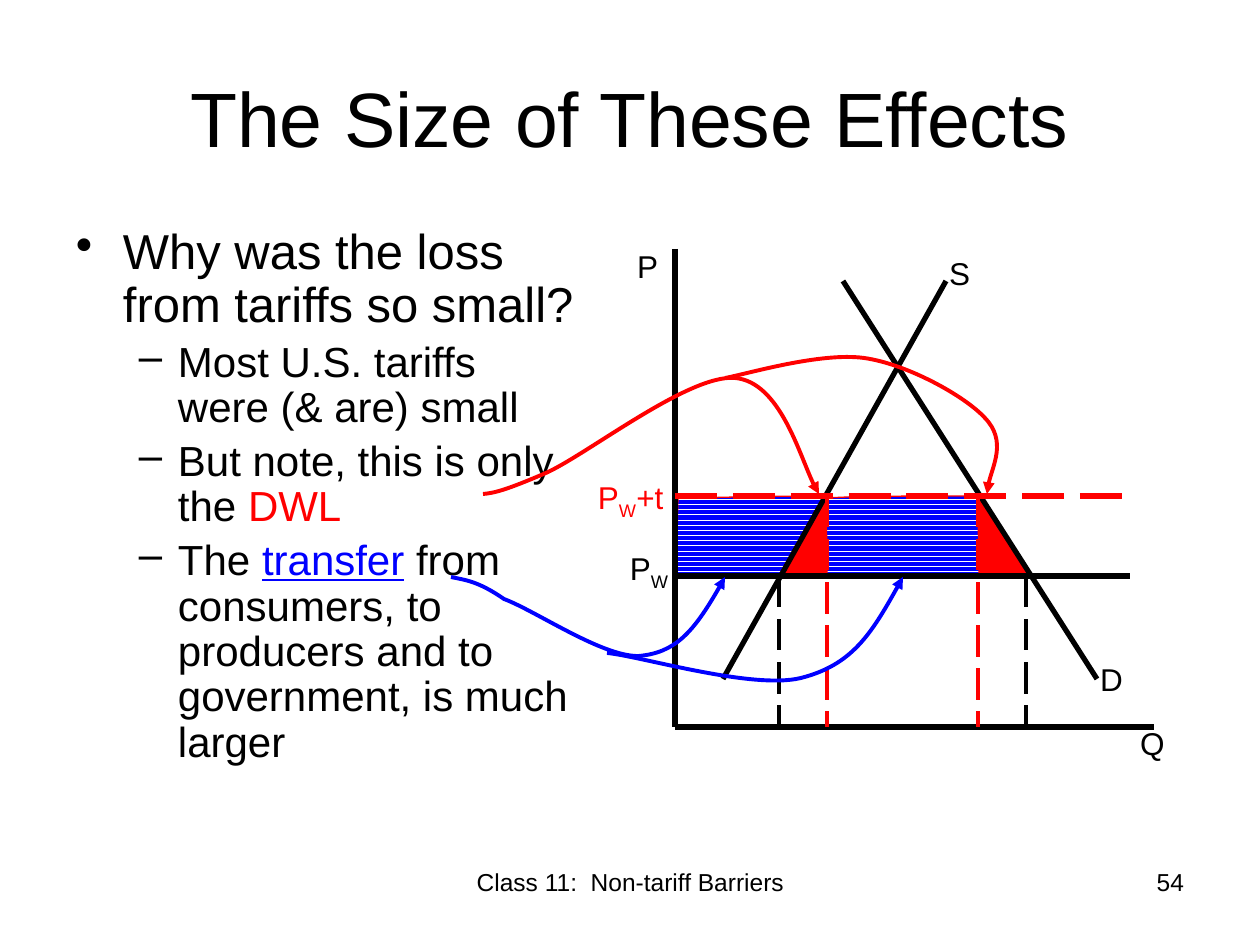
import pptx
import pptx.util
import pptx.dml.color
import pptx.enum.dml
import pptx.enum.shapes
import pptx.enum.text
import pptx.oxml
import pptx.oxml.ns

RGB = pptx.dml.color.RGBColor
BLACK, WHITE = RGB(0, 0, 0), RGB(255, 255, 255)
RED, BLUE = RGB(255, 0, 0), RGB(0, 0, 255)
ALIGN = pptx.enum.text.PP_ALIGN
ANCHOR = pptx.enum.text.MSO_ANCHOR
EMU_PER_PX = 914400 / 126
qn = pptx.oxml.ns.qn


def px(length):
    return pptx.util.Emu(round(length * EMU_PER_PX))


def add_xml(parent, tag, **attributes):
    element = parent.makeelement(qn(tag), attributes)
    parent.append(element)
    return element


class Diagram:
    font = "Arial"

    def __init__(self, slide):
        self.shapes = slide.shapes

    def frame(self, left, top, width, height, insets=(13, 6, 13, 6)):
        frame = self.shapes.add_textbox(px(left), px(top), px(width), px(height)).text_frame
        frame.word_wrap = True
        frame.margin_left, frame.margin_top, frame.margin_right, frame.margin_bottom = map(px, insets)
        return frame

    def fill_paragraph(self, paragraph, parts, size, align=None):
        """Each part is (text, colour), followed by "sub" or "underline" if needed."""
        paragraph.font.name = self.font
        paragraph.font.size = pptx.util.Pt(size)
        paragraph.alignment = align
        for words, colour, *looks in parts:
            run = paragraph.add_run()
            run.text = words
            run.font.name = self.font
            run.font.size = pptx.util.Pt(size)
            run.font.color.rgb = colour
            if "underline" in looks:
                run.font.underline = True
            if "sub" in looks:
                run.font._element.set("baseline", "-25000")

    def text(self, box, words, size, align, anchor=ANCHOR.TOP):
        frame = self.frame(*box)
        frame.vertical_anchor = anchor
        self.fill_paragraph(frame.paragraphs[0], [(words, BLACK)], size, align)

    def label(self, left, top, width, *parts):
        frame = self.frame(left, top, width, 45, (10, 5, 0, 5))
        self.fill_paragraph(frame.paragraphs[0], parts, 18)

    def bullets(self, box, items):
        frame = self.frame(*box)
        for number, (level, parts) in enumerate(items):
            paragraph = frame.add_paragraph() if number else frame.paragraphs[0]
            size, mark, margin, indent = ((28, "•", 47, -47), (24, "–", 102, -39))[level]
            self.fill_paragraph(paragraph, parts, size)
            paragraph.level = level
            paragraph.line_spacing = 0.9
            paragraph.space_before = pptx.util.Pt(size * 0.2)
            properties = paragraph._p.get_or_add_pPr()
            properties.set("marL", str(px(margin)))
            properties.set("indent", str(px(indent)))
            bullet = properties.makeelement(qn("a:buChar"), {"char": mark})
            properties.insert_element_before(bullet, "a:tabLst", "a:defRPr", "a:extLst")

    def line(self, start, end, colour=BLACK, width=3, dashed=False):
        connector = self.shapes.add_connector(
            pptx.enum.shapes.MSO_CONNECTOR.STRAIGHT, *map(px, start + end))
        connector.line.color.rgb = colour
        connector.line.width = pptx.util.Pt(width)
        if dashed:
            connector.line.dash_style = pptx.enum.dml.MSO_LINE.LONG_DASH
        add_xml(connector._element.spPr, "a:effectLst")

    def curve(self, points, colour, width, closed=False):
        """Draw Bézier segments: a start point, then three points a segment."""
        builder = self.shapes.build_freeform(*points[0], scale=EMU_PER_PX)
        builder.add_line_segments(points[1:], close=closed)
        shape = builder.convert_to_shape()
        shape.shadow.inherit = False
        shape.line.color.rgb = colour
        shape.line.width = pptx.util.Pt(width)
        steps = list(shape._element.iter(qn("a:lnTo")))
        for first in range(0, len(points) - 1, 3):
            segment = steps[first].makeelement(qn("a:cubicBezTo"), {})
            steps[first].addprevious(segment)
            for step in steps[first:first + 3]:
                segment.append(step[0])
                step.getparent().remove(step)
        return shape

    def region(self, points, hatched=False):
        fill = self.curve(points, RED, 0.75, closed=True).fill
        if hatched:
            fill.patterned()
            fill.pattern = pptx.enum.dml.MSO_PATTERN.DARK_HORIZONTAL
            fill.fore_color.rgb = BLUE
            fill.back_color.rgb = WHITE
        else:
            fill.solid()
            fill.fore_color.rgb = RED

    def arrow(self, points, colour):
        shape = self.curve(points, colour, 2.25)
        shape.fill.background()
        add_xml(shape._element.spPr.find(qn("a:ln")), "a:tailEnd", type="triangle")


def main():
    deck = pptx.Presentation()
    deck.slide_width, deck.slide_height = px(1260), px(945)
    diagram = Diagram(deck.slides.add_slide(deck.slide_layouts[6]))

    # Footer, title and argument
    diagram.text((431, 861, 399, 66), "Class 11:  Non-tariff Barriers", 14, ALIGN.CENTER)
    diagram.text((903, 861, 294, 66), "54", 14, ALIGN.RIGHT)
    diagram.text((63, 38, 1134, 158), "The Size of These Effects", 44, ALIGN.CENTER, ANCHOR.MIDDLE)
    diagram.bullets((63, 221, 525, 624), [
        (0, [("Why was the loss from tariffs so small?", BLACK)]),
        (1, [("Most U.S. tariffs were (& are) small", BLACK)]),
        (1, [("But note, this is only the ", BLACK), ("DWL", RED)]),
        (1, [("The ", BLACK), ("transfer", BLUE, "underline"),
             (" from consumers, to producers and to government, is much larger", BLACK)]),
    ])

    # Welfare areas: consumption loss, government, producers, production loss
    diagram.region([(980, 496), (979, 530), (979, 544), (979, 576), (1013, 576), (1013, 576),
                    (1031, 576), (1008, 538), (998, 523), (980, 496)])
    diagram.region([(827, 498), (824, 532), (824, 546), (824, 577), (858, 576), (960, 576),
                    (979, 575), (979, 544), (978, 538), (978, 496), (905, 496), (857, 496),
                    (827, 498)], hatched=True)
    diagram.region([(678, 498), (677, 532), (677, 546), (677, 577), (711, 577), (762, 576),
                    (780, 576), (785, 570), (806, 534), (825, 496), (752, 496), (709, 498),
                    (678, 498)], hatched=True)
    diagram.region([(825, 498), (827, 532), (827, 546), (827, 577), (796, 576), (796, 577),
                    (781, 576), (801, 539), (810, 524), (825, 498)])

    # Axes, supply, demand and world price
    axis, base, world_price, tariff_price = 675, 727, 576, 496
    diagram.line((axis, 249), (axis, base))
    diagram.line((axis, base), (1154, base))
    diagram.line((946, 281), (723, 679))
    diagram.line((843, 281), (1097, 679))
    diagram.line((axis, world_price), (1130, world_price))

    # Quantities at each price, and the price with the tariff
    for quantity in (779, 1026):
        diagram.line((quantity, world_price), (quantity, base), BLACK, 2.25, dashed=True)
    diagram.line((axis, tariff_price), (1130, tariff_price), RED, dashed=True)
    for quantity in (827, 978):
        diagram.line((quantity, tariff_price), (quantity, base), RED, 2.25, dashed=True)

    # Labels
    for name, left, top in (("S", 939, 249), ("D", 1090, 655), ("P", 627, 242), ("Q", 1130, 719)):
        diagram.label(left, top, 55, (name, BLACK))
    diagram.label(620, 544, 64, ("P", BLACK), ("W", BLACK, "sub"))
    diagram.label(588, 473, 103, ("P", RED), ("W", RED, "sub"), ("+t", RED))

    # Arrows from the argument to the areas
    diagram.arrow([(483, 494), (494, 493), (504, 491), (546, 473), (588, 454), (689, 374),
                   (735, 378), (780, 382), (805, 474), (819, 494)], RED)
    diagram.arrow([(725, 378), (747, 374), (820, 352), (864, 358), (907, 364), (965, 396),
                   (985, 418), (1007, 441), (987, 478), (987, 494)], RED)
    diagram.arrow([(451, 577), (465, 580), (478, 581), (504, 599), (536, 611), (601, 656),
                   (638, 656), (675, 653), (696, 630), (725, 577)], BLUE)
    diagram.arrow([(607, 653), (640, 656), (752, 690), (801, 678), (852, 665), (874, 630),
                   (903, 577)], BLUE)

    deck.save("out.pptx")


if __name__ == "__main__":
    main()
